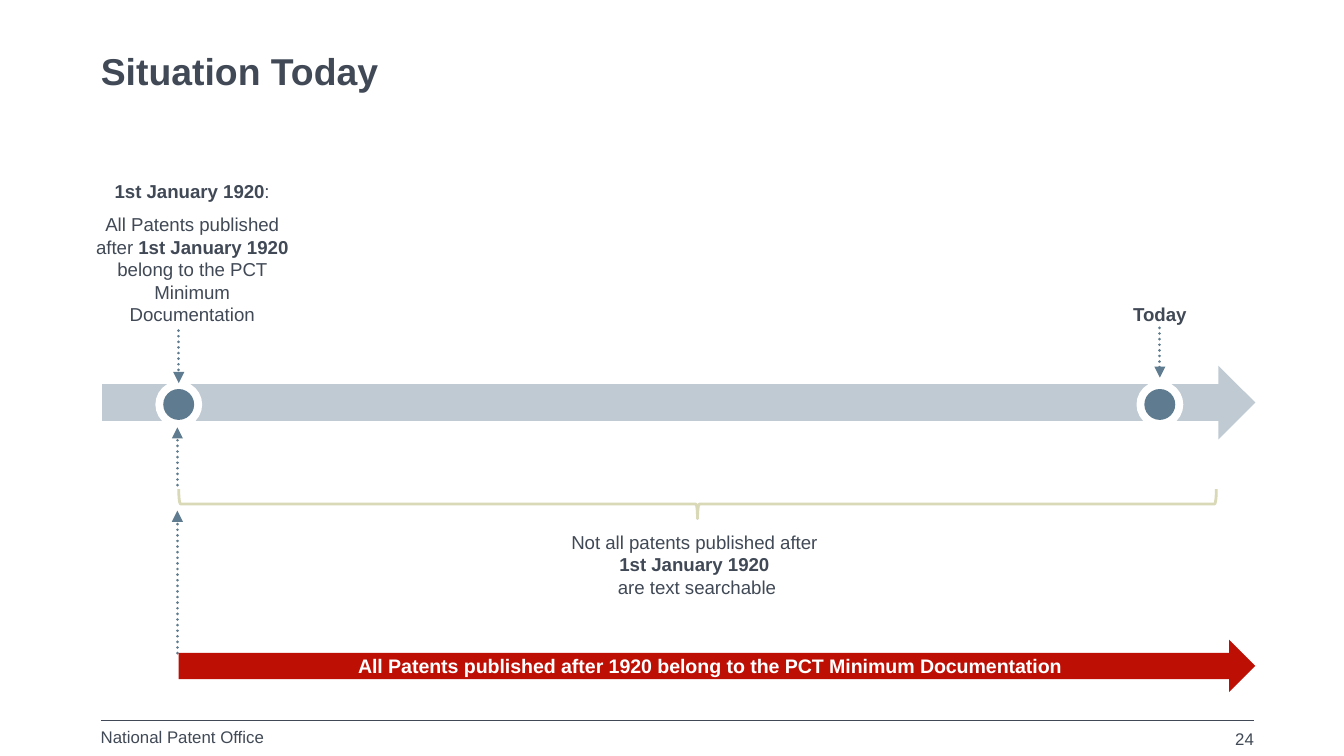
from lxml.etree import SubElement
from pptx import Presentation
from pptx.dml.color import RGBColor
from pptx.enum.dml import MSO_LINE
from pptx.enum.shapes import MSO_CONNECTOR, MSO_SHAPE
from pptx.enum.text import MSO_ANCHOR, MSO_AUTO_SIZE, PP_ALIGN
from pptx.oxml.ns import qn
from pptx.util import Pt

PX = 9144  # 100 px to the inch

INK = RGBColor(0x40, 0x49, 0x55)
STEEL = RGBColor(0x5F, 0x7B, 0x8F)
MIST = RGBColor(0xC0, 0xCA, 0xD3)
SAND = RGBColor(0xD9, 0xD9, 0xB7)
RED = RGBColor(0xBE, 0x0F, 0x05)
WHITE = RGBColor(0xFF, 0xFF, 0xFF)

TITLE = "Situation Today"
FOOTER = "National Patent Office"
PAGE_NUMBER = "24"
BAR_TEXT = "All Patents published after 1920 belong to the PCT Minimum Documentation"

# Each paragraph is a list of (text, bold) runs.
START_NOTE = [
    [("1st January 1920", True), (":", False)],
    [("All Patents published after ", False), ("1st January 1920 ", True),
     ("belong to the PCT Minimum Documentation", False)],
]
TODAY_NOTE = [[("Today", True)]]
SEARCH_NOTE = [
    [("Not all patents published after ", False)],
    [("1st January 1920 ", True)],
    [("are text searchable", False)],
]

MILESTONE_CENTERS = [(133, 301), (863, 301)]
RING_SIZE, DOT_SIZE = 32, 23


def px(*lengths):
    return [round(length * PX) for length in lengths]


def style_font(font, size, color, bold=None):
    font.name, font.size, font.bold = "Arial", Pt(size), bold
    font.color.rgb = color


def add_shape(shapes, kind, place, fill=None, line=None, width=0):
    shape = shapes.add_shape(kind, *px(*place))
    shape.shadow.inherit = False
    if fill is None:
        shape.fill.background()
    else:
        shape.fill.solid()
        shape.fill.fore_color.rgb = fill
    if line is None:
        shape.line.fill.background()
    else:
        shape.line.color.rgb = line
        shape.line.width = Pt(width)
    return shape


def add_text(page, place, paragraphs, size=10, align=PP_ALIGN.CENTER,
             anchor=MSO_ANCHOR.BOTTOM, bottom=2):
    box = page.shapes.add_textbox(*px(*place))
    frame = box.text_frame
    frame.word_wrap = True
    frame.auto_size = MSO_AUTO_SIZE.NONE
    frame.vertical_anchor = anchor
    frame.margin_left = frame.margin_top = frame.margin_right = 0
    frame.margin_bottom = bottom * PX
    for index, runs in enumerate(paragraphs):
        para = frame.add_paragraph() if index else frame.paragraphs[0]
        para.alignment = align
        style_font(para.font, size, INK)
        for text, bold in runs:
            span = para.add_run()
            span.text = text
            style_font(span.font, size, INK, bold)
    return box


def add_line(page, start, end, color, width):
    line = page.shapes.add_connector(MSO_CONNECTOR.STRAIGHT, *px(*start, *end))
    line.line.color.rgb = color
    line.line.width = Pt(width)
    SubElement(line._element.spPr, qn("a:effectLst"))
    return line


def add_dotted_arrow(page, start, end):
    arrow = add_line(page, start, end, STEEL, 1.5)
    arrow.line.dash_style = MSO_LINE.ROUND_DOT
    outline = arrow.line._get_or_add_ln()
    outline.set("cap", "rnd")
    SubElement(outline, qn("a:tailEnd"), type="triangle")
    return arrow


def add_milestone(page, center):
    group = page.shapes.add_group_shape()
    for size, fill, line in ((RING_SIZE, WHITE, WHITE), (DOT_SIZE, STEEL, None)):
        place = (center[0] - size / 2, center[1] - size / 2, size, size)
        add_shape(group.shapes, MSO_SHAPE.OVAL, place, fill, line, 2)


def fill_title(page):
    title = page.shapes.title
    title.left, title.top, title.width, title.height = px(75, 30, 858, 44)
    frame = title.text_frame
    frame.text = TITLE
    frame.vertical_anchor = MSO_ANCHOR.TOP
    frame.auto_size = MSO_AUTO_SIZE.NONE
    frame.margin_left = frame.margin_top = frame.margin_right = frame.margin_bottom = 0
    para = frame.paragraphs[0]
    para.alignment = PP_ALIGN.LEFT
    para.line_spacing = Pt(28)
    style_font(para.font, 20, INK, True)


def add_footer(page):
    add_line(page, (75, 536), (933, 536), INK, 0.75)
    for place, text, align in (((75, 541, 170, 19), FOOTER, PP_ALIGN.LEFT),
                               ((700, 542, 233, 18), PAGE_NUMBER, PP_ALIGN.RIGHT)):
        add_text(page, place, [[(text, False)]], 9, align, MSO_ANCHOR.TOP, 0)


def add_timeline(page):
    add_shape(page.shapes, MSO_SHAPE.RIGHT_ARROW, (76, 272, 858, 55), MIST)
    for center in MILESTONE_CENTERS:
        add_milestone(page, center)

    today = add_text(page, (803, 227, 120, 17), TODAY_NOTE)
    today.text_frame.paragraphs[0].line_spacing = 0.9
    today_arrow = add_dotted_arrow(page, (863, 244), (863, 281))
    today_arrow.begin_connect(today, 2)

    for start, end in (((133, 246), (133, 285)),
                       ((132, 361), (132, 318)),
                       ((132, 486), (132, 380))):
        add_dotted_arrow(page, start, end)

    start_note = add_text(page, (70, 133, 146, 111), START_NOTE)
    start_note.text_frame.paragraphs[0].space_after = Pt(6)


def add_coverage(page):
    add_text(page, (393, 395, 251, 52), SEARCH_NOTE)
    brace = add_shape(page.shapes, MSO_SHAPE.LEFT_BRACE, (508, -11, 22, 772),
                      line=SAND, width=1.5)
    brace.rotation = 270
    brace.adjustments[0] = 0.06

    bar = add_shape(page.shapes, MSO_SHAPE.RIGHT_ARROW, (133, 476, 801, 39), RED)
    frame = bar.text_frame
    frame.text = BAR_TEXT
    frame.vertical_anchor = MSO_ANCHOR.MIDDLE
    para = frame.paragraphs[0]
    para.alignment = PP_ALIGN.CENTER
    style_font(para.font, 10.5, WHITE, True)


def main():
    deck = Presentation()
    deck.slide_width = 1000 * PX
    deck.slide_height = deck.slide_width * 9 // 16
    page = deck.slides.add_slide(deck.slide_layouts[5])
    fill_title(page)
    add_footer(page)
    add_timeline(page)
    add_coverage(page)
    deck.save("out.pptx")


if __name__ == "__main__":
    main()
